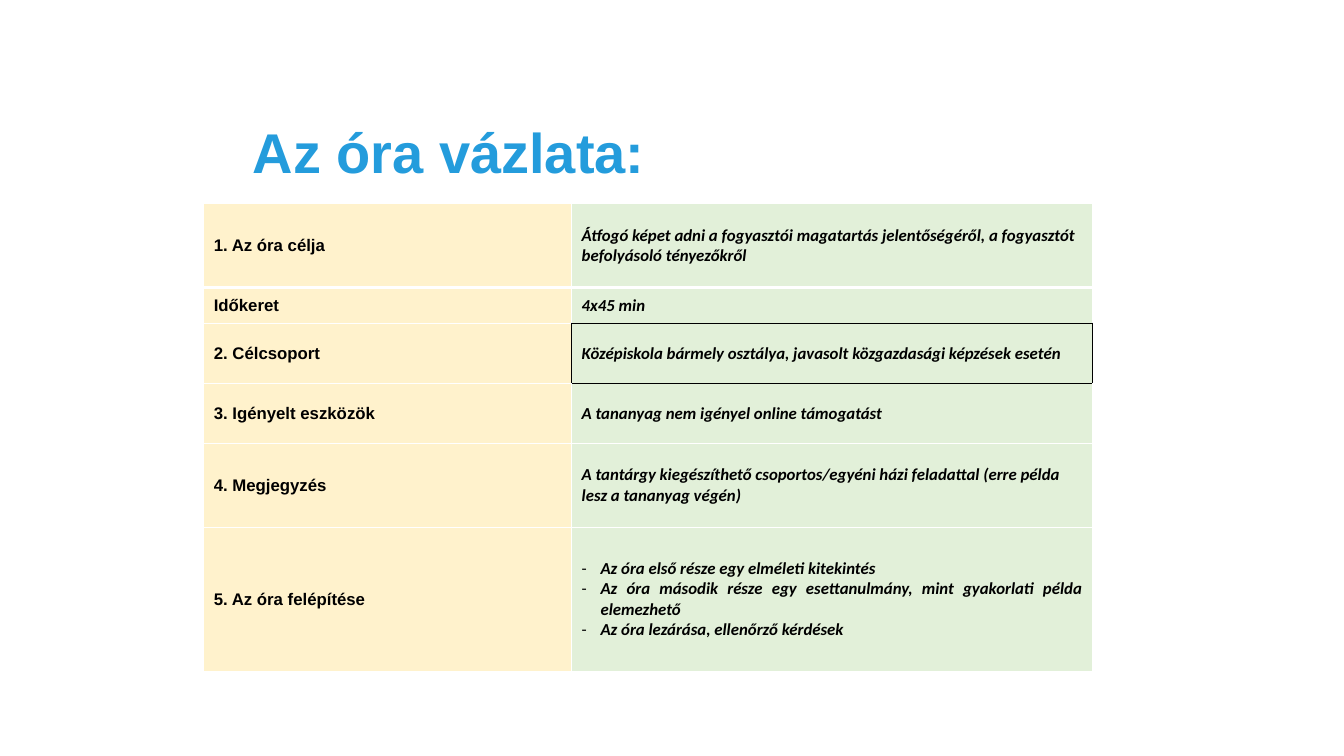
from lxml import etree
from pptx import Presentation
from pptx.dml.color import RGBColor
from pptx.enum.text import MSO_ANCHOR, PP_ALIGN
from pptx.oxml.ns import qn
from pptx.util import Pt

MIDDLE = MSO_ANCHOR.MIDDLE
LEFT, JUSTIFY = PP_ALIGN.LEFT, PP_ALIGN.JUSTIFY

BLUE = RGBColor(0x24, 0x9C, 0xDC)
BLACK = RGBColor(0, 0, 0)
WHITE = RGBColor(0xFF, 0xFF, 0xFF)
CREAM = RGBColor(0xFF, 0xF2, 0xCC)
GREEN = RGBColor(0xE2, 0xF0, 0xD9)

COL_WIDTHS = [262.8, 372.2]
# Row height, label, content (a list is a dashed list)
ROWS = [
    (59.8, "1. Az óra célja",
     "Átfogó képet adni a fogyasztói magatartás jelentőségéről, "
     "a fogyasztót befolyásoló tényezőkről"),
    (25.6, "Időkeret", "4x45 min"),
    (43, "2. Célcsoport",
     "Középiskola bármely osztálya, javasolt közgazdasági képzések esetén"),
    (43, "3. Igényelt eszközök", "A tananyag nem igényel online támogatást"),
    (59.8, "4. Megjegyzés",
     "A tantárgy kiegészíthető csoportos/egyéni házi feladattal "
     "(erre példa lesz a tananyag végén)"),
    (103, "5. Az óra felépítése",
     ["Az óra első része egy elméleti kitekintés",
      "Az óra második része egy esettanulmány, mint gyakorlati példa elemezhető",
      "Az óra lezárása, ellenőrző kérdések"]),
]
FRAMED_ROW = 2


def style_font(font, name, size, color, italic=False):
    font.name, font.size, font.bold, font.italic = name, Pt(size), True, italic
    font.color.rgb = color


def add_title(slide, left, top, width, height):
    tf = slide.shapes.add_textbox(Pt(left), Pt(top), Pt(width), Pt(height)).text_frame
    tf.word_wrap = True
    tf.vertical_anchor = MIDDLE
    p = tf.paragraphs[0]
    p.text = "Az óra vázlata:"
    p.line_spacing = 0.9
    style_font(p.font, "Arial", 40, BLUE)


def edge_styles(row, col):
    """Colour and width of each side; neighbouring cells agree on shared sides."""
    edges = {side: (WHITE, 1) for side in "LRTB"}
    if row == 0:
        edges["B"] = (WHITE, 3)
    elif row == 1:
        edges["T"] = (WHITE, 3)
    framed = {(FRAMED_ROW, 1): "LRTB", (FRAMED_ROW, 0): "R",
              (FRAMED_ROW - 1, 1): "B", (FRAMED_ROW + 1, 1): "T"}
    for side in framed.get((row, col), ""):
        edges[side] = (BLACK, 1)
    return edges


def set_borders(cell, edges):
    tc_pr = cell._tc.get_or_add_tcPr()
    for side, (color, width) in edges.items():
        ln = etree.SubElement(tc_pr, qn(f"a:ln{side}"), w=str(Pt(width)))
        fill = etree.SubElement(ln, qn("a:solidFill"))
        etree.SubElement(fill, qn("a:srgbClr"), val=str(color))


def add_dash(p):
    p_pr = p._p.get_or_add_pPr()
    p_pr.set("marL", str(Pt(13.5)))
    p_pr.set("indent", str(-Pt(13.5)))
    etree.SubElement(p_pr, qn("a:buFont"), typeface="Calibri")
    etree.SubElement(p_pr, qn("a:buChar"), char="-")


def fill_cell(cell, content, is_label):
    dashed = isinstance(content, list)
    lines = content if dashed else [content]
    tf = cell.text_frame
    tf.text = "\n".join(lines)
    cell.vertical_anchor = MIDDLE
    for p in tf.paragraphs:
        last = p.text == lines[-1]
        p.alignment = JUSTIFY if is_label or (dashed and not last) else LEFT
        if dashed:
            add_dash(p)
        style_font(p.font, "Arial" if is_label else "Calibri", 12, BLACK,
                   italic=not is_label)


def add_outline_table(slide, left, top):
    heights = [height for height, *_ in ROWS]
    table = slide.shapes.add_table(
        len(ROWS), len(COL_WIDTHS), Pt(left), Pt(top),
        Pt(sum(COL_WIDTHS)), Pt(sum(heights))).table
    table.first_row = table.horz_banding = False
    for column, width in zip(table.columns, COL_WIDTHS):
        column.width = Pt(width)
    for r, (height, *contents) in enumerate(ROWS):
        table.rows[r].height = Pt(height)
        for c, content in enumerate(contents):
            cell = table.cell(r, c)
            fill_cell(cell, content, is_label=c == 0)
            set_borders(cell, edge_styles(r, c))
            cell.fill.solid()
            cell.fill.fore_color.rgb = (CREAM, GREEN)[c]


def main():
    prs = Presentation()
    prs.slide_width, prs.slide_height = Pt(960), Pt(540)
    slide = prs.slides.add_slide(prs.slide_layouts[6])
    add_title(slide, 173.5, 94.3, 408.2, 33.8)
    add_outline_table(slide, 145.5, 145.5)
    prs.save("out.pptx")


if __name__ == "__main__":
    main()
